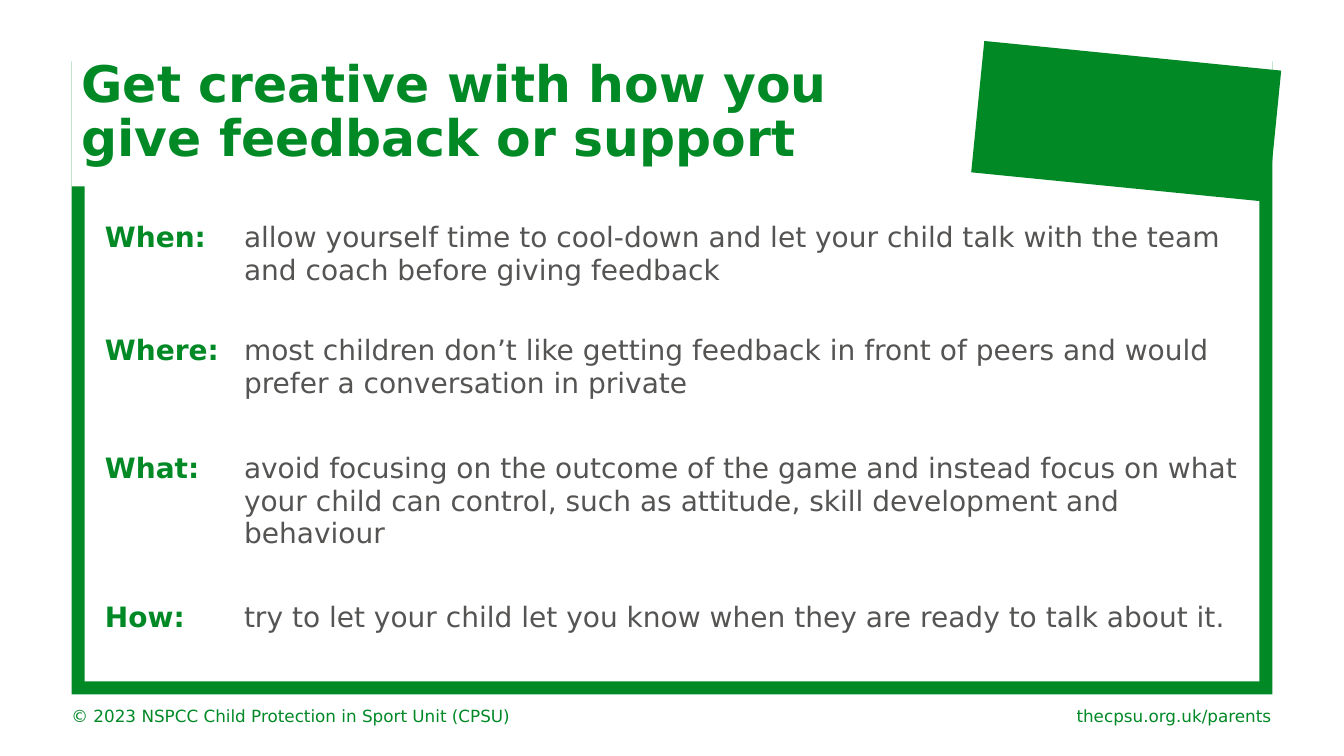
from pptx import Presentation
from pptx import util as u
from pptx.dml.color import RGBColor
from pptx.enum import shapes, text

COLORS = {"green": "018926", "grey": "555453", "white": "FFFFFF"}
FONT = "DejaVu Sans"
TITLE = "Get creative with how you give feedback or support"
FOOTERS = [
    ("© 2023 NSPCC Child Protection in Sport Unit (CPSU)", (0.61, 6.95, 4.67, 0.3), text.PP_ALIGN.LEFT),
    ("thecpsu.org.uk/parents", (10.28, 6.95, 2.43, 0.3), text.PP_ALIGN.RIGHT),
]
ADVICE = [
    ("When:", "allow yourself time to cool-down and let your child talk with the team "
              "and coach before giving feedback", 1.12),
    ("Where:", "most children don’t like getting feedback in front of peers and would "
               "prefer a conversation in private", 1.17),
    ("What:", "avoid focusing on the outcome of the game and instead focus on what "
              "your child can control, such as attitude, skill development and behaviour", 1.48),
    ("How:", "try to let your child let you know when they are ready to talk about it.", 0.79),
]
COLUMNS = (1.38, 10.08)


def inches(box):
    return [u.Inches(v) for v in box]


def rgb(name):
    return RGBColor.from_string(COLORS[name])


def add_rect(slide, box, color, rotation=0):
    sp = slide.shapes.add_shape(shapes.MSO_SHAPE.RECTANGLE, *inches(box))
    sp.shadow.inherit = False
    sp.fill.solid()
    sp.fill.fore_color.rgb = rgb(color)
    sp.line.fill.background()
    sp.rotation = rotation
    return sp


def write(tf, words, size, color="green", bold=False, align=text.PP_ALIGN.LEFT):
    tf.word_wrap = True
    p = tf.paragraphs[0]
    p.text = words
    p.alignment = align
    p.font.name = FONT
    p.font.size = u.Pt(size)
    p.font.bold = bold
    p.font.color.rgb = rgb(color)
    return p


def add_frame(slide, box, border=0.13):
    left, top, width, height = box
    add_rect(slide, box, "green")
    inner = (left + border, top + border, width - 2 * border, height - 2 * border)
    add_rect(slide, inner, "white")
    add_rect(slide, (left + width - 6.28, top - 0.21, 6.28, 1.1), "white")
    add_rect(slide, (left + width - 2.93, top - 0.06, 2.96, 1.31), "green", 5.7)


def add_title(slide, box):
    tf = add_rect(slide, box, "white").text_frame
    tf.vertical_anchor = text.MSO_ANCHOR.MIDDLE
    write(tf, TITLE, 36, bold=True).line_spacing = 0.9


def add_footer(slide, words, box, align):
    sp = slide.shapes.add_textbox(*inches(box))
    write(sp.text_frame, words, 12, align=align)


def add_advice(slide, box):
    table = slide.shapes.add_table(len(ADVICE), len(COLUMNS), *inches(box)).table
    table.first_row = table.horz_banding = False
    for column, width in zip(table.columns, COLUMNS):
        column.width = u.Inches(width)
    for i, (label, advice, height) in enumerate(ADVICE):
        table.rows[i].height = u.Inches(height)
        for j, (words, color) in enumerate([(label, "green"), (advice, "grey")]):
            cell = table.cell(i, j)
            cell.fill.background()
            write(cell.text_frame, words, 20, color, bold=j == 0)


def main():
    prs = Presentation()
    prs.slide_width, prs.slide_height = inches((13.33, 7.5))
    slide = prs.slides.add_slide(prs.slide_layouts[6])
    add_frame(slide, (0.71, 0.61, 11.91, 6.28))
    for footer in FOOTERS:
        add_footer(slide, *footer)
    add_title(slide, (0.71, 0.4, 8.48, 1.45))
    add_advice(slide, (0.94, 2.15, sum(COLUMNS), 4.56))
    prs.save("out.pptx")


if __name__ == "__main__":
    main()
